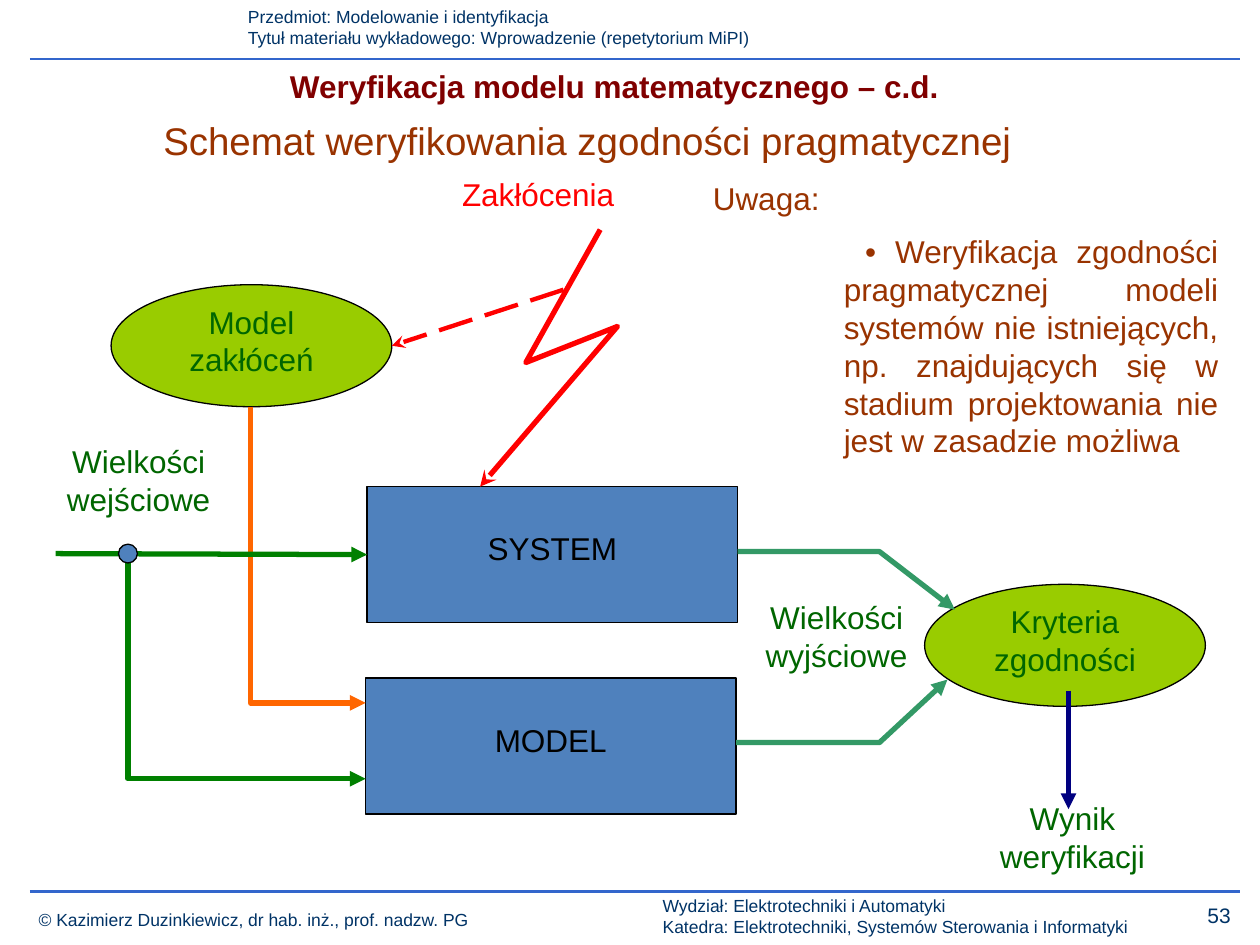
"""Build the slide on verifying the pragmatic consistency of a mathematical model."""
from lxml.etree import SubElement
from pptx import Presentation
from pptx.dml.color import RGBColor
from pptx.enum.dml import MSO_LINE
from pptx.enum.shapes import MSO_CONNECTOR, MSO_SHAPE
from pptx.enum.text import MSO_ANCHOR as Anchor, PP_ALIGN as Align
from pptx.oxml.ns import qn
from pptx.util import Cm, Pt

COLORS = {
    "navy": "003366", "rule": "3366CC", "black": "000000", "blue": "4F81BD",
    "red": "FF0000", "lime": "99CC00", "dark green": "006600", "orange": "FF6600",
    "green": "008000", "sea": "339966", "indigo": "000080", "brown": "993300",
    "maroon": "800000",
}
FONT = "Arial"
BOX_SIZE = (7.47, 2.74)
OVAL_SIZE = (5.66, 2.46)
DOT_SIZE = (0.38, 0.38)

# name: (preset, left, top, size, fill, label, label colour)
NODES = {
    "system": (MSO_SHAPE.RECTANGLE, 7.4, 9.81, BOX_SIZE, "blue", "SYSTEM", "black"),
    "model": (MSO_SHAPE.RECTANGLE, 7.37, 13.67, BOX_SIZE, "blue", "MODEL", "black"),
    "noise model": (MSO_SHAPE.OVAL, 2.24, 5.74, OVAL_SIZE, "lime", "Model zakłóceń", "dark green"),
    "criteria": (MSO_SHAPE.OVAL, 18.64, 11.78, OVAL_SIZE, "lime", "Kryteria zgodności", "dark green"),
}
INPUT_DOT = (MSO_SHAPE.OVAL, 2.39, 10.97, DOT_SIZE, "blue", "", "black")

# points, colour, arrowhead
PATHS = [
    ([(12.1, 4.63), (10.6, 7.31), (12.45, 6.58), (9.68, 9.81)], "red", "stealth"),
    ([(5.05, 8.2), (5.05, 14.17), (7.37, 14.17)], "orange", "triangle"),
    ([(2.58, 11.16), (2.58, 15.7), (7.37, 15.7)], "green", "triangle"),
    ([(14.87, 11.12), (17.73, 11.12), (19.25, 12.29)], "sea", "triangle"),
    ([(14.84, 14.97), (17.73, 14.97), (19.1, 13.7)], "sea", "triangle"),
]

# start, end, colour, width, arrowhead, dash, node joined at its left side
LINES = [
    ((0.6, 1.19), (25, 1.19), "rule", 1.25, None, None, None),
    ((0.6, 17.97), (25, 17.97), "rule", 1.25, None, None, None),
    ((11.36, 5.84), (7.9, 6.97), "red", 2.5, "stealth", MSO_LINE.LONG_DASH, None),
    ((1.12, 11.16), (7.4, 11.18), "green", 3, "triangle", None, "system"),
    ((21.54, 13.92), (21.54, 16.31), "indigo", 3, "triangle", None, None),
]

# paragraphs, (left, top, width, height), size, colour, alignment, bold
TEXTS = [
    (["Przedmiot: Modelowanie i identyfikacja",
      "Tytuł materiału wykładowego: Wprowadzenie (repetytorium MiPI)"],
     (4.75, 0, 20.65, 1.12), 10, "navy", Align.LEFT, False),
    (["© Kazimierz Duzinkiewicz, dr hab. inż., prof. nadzw. PG"],
     (0.53, 18.19, 10.21, 0.69), 10, "navy", Align.LEFT, False),
    (["Wydział: Elektrotechniki i Automatyki",
      "Katedra: Elektrotechniki, Systemów Sterowania i Informatyki"],
     (13.11, 17.91, 11.3, 1.12), 10, "navy", Align.LEFT, False),
    (["53"], (23.75, 18.06, 1.65, 0.76), 12, "navy", Align.CENTER, False),
    (["Weryfikacja modelu matematycznego – c.d."],
     (2.49, 1.22, 19.79, 1.02), 18, "maroon", Align.CENTER, True),
    (["Schemat weryfikowania zgodności pragmatycznej"],
     (1.64, 2.24, 20.4, 1.19), 22, "brown", Align.CENTER, False),
    (["Zakłócenia"], (7.7, 3.4, 6.3, 1.02), 18, "red", Align.CENTER, False),
    (["Wielkości wejściowe"], (0.56, 8.79, 4.47, 1.8), 18, "dark green", Align.CENTER, False),
    (["Wielkości wyjściowe"], (14.63, 11.94, 4.47, 1.8), 18, "dark green", Align.CENTER, False),
    (["Wynik weryfikacji"], (19.08, 15.98, 5.08, 1.8), 18, "dark green", Align.CENTER, False),
]
REMARK = (
    ["Uwaga:",
     "• Weryfikacja zgodności pragmatycznej modeli systemów nie istniejących, "
     "np. znajdujących się w stadium projektowania nie jest w zasadzie możliwa"],
    (14.12, 3.48, 10.69, 6.02), 18, "brown", Align.JUSTIFY, False)
REMARK_MARGIN = 2.64
REMARK_INDENTS = (-2.64, 0.43)


def rgb(name):
    return RGBColor.from_string(COLORS[name])


def style_paragraph(paragraph, size, color, align, bold=False):
    paragraph.alignment = align
    font = paragraph.font
    font.name, font.size, font.bold = FONT, Pt(size), bold
    font.color.rgb = rgb(color)


def style_line(shape, color, width, head=None, dash=None):
    line = shape.line
    line.color.rgb, line.width = rgb(color), Pt(width)
    if dash is not None:
        line.dash_style = dash
    if head:
        SubElement(line._get_or_add_ln(), qn("a:tailEnd"), type=head)


def add_node(shapes, preset, left, top, size, fill, label, color):
    shape = shapes.add_shape(preset, *map(Cm, (left, top, *size)))
    shape.shadow.inherit = False
    shape.fill.solid()
    shape.fill.fore_color.rgb = rgb(fill)
    style_line(shape, "black", 0.75)
    if label:
        frame = shape.text_frame
        frame.word_wrap = True
        is_box = preset == MSO_SHAPE.RECTANGLE
        frame.vertical_anchor = Anchor.MIDDLE if is_box else Anchor.TOP
        frame.margin_top = Cm(0)
        frame.margin_bottom = Cm(0.25 if is_box else 0)
        frame.text = label
        style_paragraph(frame.paragraphs[0], 18, color, Align.CENTER)
    return shape


def add_path(shapes, points, color, head):
    start, *others = [(Cm(x), Cm(y)) for x, y in points]
    builder = shapes.build_freeform(*start)
    builder.add_line_segments(others, close=False)
    shape = builder.convert_to_shape()
    shape.shadow.inherit = False
    shape.fill.background()
    style_line(shape, color, 3, head)


def add_line(shapes, start, end, color, width, head, dash, target):
    line = shapes.add_connector(MSO_CONNECTOR.STRAIGHT, *map(Cm, (*start, *end)))
    SubElement(line._element.spPr, qn("a:effectLst"))
    style_line(line, color, width, head, dash)
    if target is not None:
        line.end_connect(target, 1)


def add_text(shapes, lines, box, size, color, align, bold):
    frame = shapes.add_textbox(*map(Cm, box)).text_frame
    frame.word_wrap = True
    frame.text = "\n".join(lines)
    for paragraph in frame.paragraphs:
        style_paragraph(paragraph, size, color, align, bold)
    return frame


def main():
    presentation = Presentation()
    presentation.slide_width, presentation.slide_height = Cm(25.4), Cm(19.05)
    shapes = presentation.slides.add_slide(presentation.slide_layouts[6]).shapes

    nodes = {name: add_node(shapes, *node) for name, node in NODES.items()}
    for path in PATHS:
        add_path(shapes, *path)
    for *line, target in LINES:
        add_line(shapes, *line, nodes.get(target))
    add_node(shapes, *INPUT_DOT)
    for text in TEXTS:
        add_text(shapes, *text)

    remark = add_text(shapes, *REMARK)
    for paragraph, indent in zip(remark.paragraphs, REMARK_INDENTS):
        properties = paragraph._p.get_or_add_pPr()
        properties.set("marL", str(Cm(REMARK_MARGIN)))
        properties.set("indent", str(Cm(indent)))
    remark.paragraphs[1].space_before = Pt(9)

    presentation.save("out.pptx")


if __name__ == "__main__":
    main()
